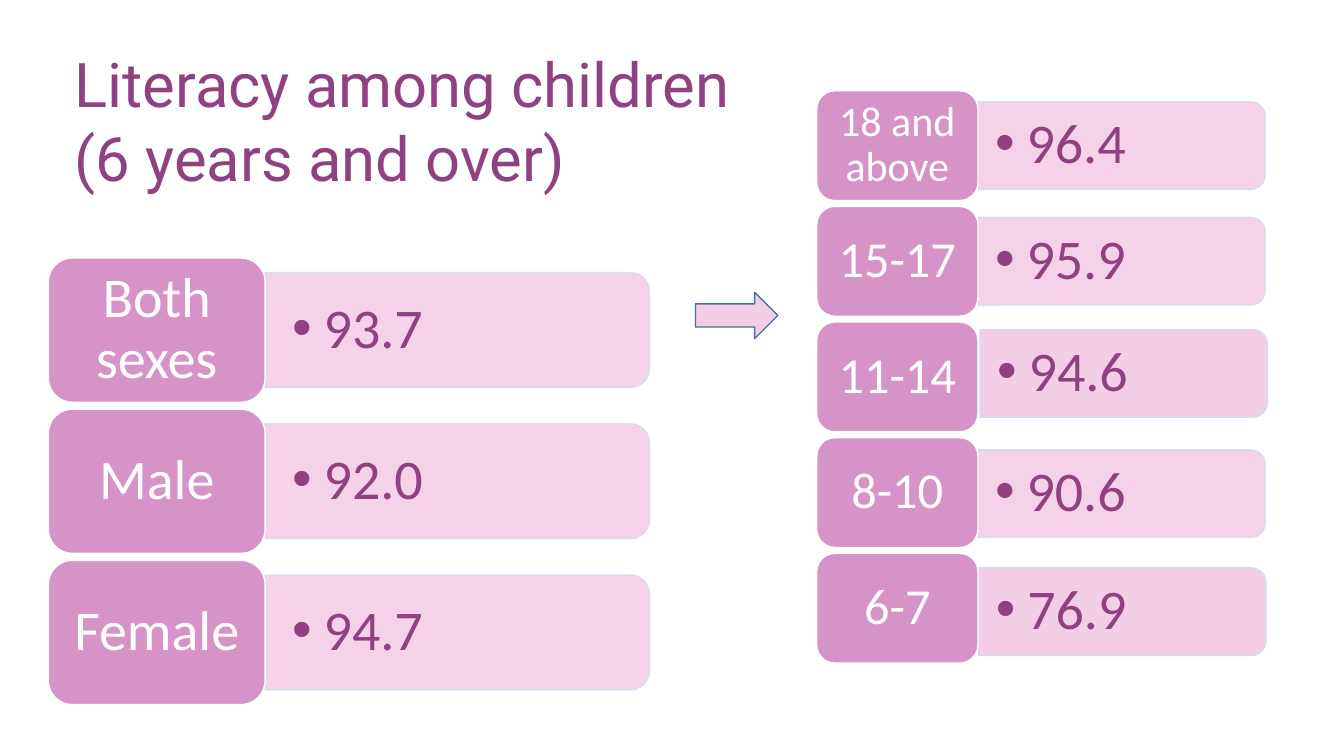
from dataclasses import dataclass

from lxml.etree import SubElement
from pptx import Presentation
from pptx.dml.color import RGBColor
from pptx.enum.shapes import MSO_SHAPE
from pptx.enum.text import MSO_ANCHOR, PP_ALIGN
from pptx.oxml.ns import qn
from pptx.util import Pt

PLUM = RGBColor(0x8F, 0x41, 0x80)
PINK = RGBColor(0xF4, 0xCE, 0xE5)
MAUVE = RGBColor(0xD5, 0x93, 0xC7)
WHITE = RGBColor(0xFF, 0xFF, 0xFF)
PALE = RGBColor(0xD2, 0xDE, 0xEF)
BLUE = RGBColor(0x43, 0x73, 0x9E)


@dataclass
class Row:
    label: str
    value: str
    size: float = 36
    dx: float = 0
    dy: float = 0
    solid: bool = False


@dataclass
class Panel:
    left: float
    top: float
    step: float
    wide: float
    high: float
    bar_wide: float
    bar_high: float
    pad: float
    inset: float
    rows: list[Row]


SEXES = Panel(34.56, 184.3, 108, 154.8, 103, 274.6, 82.1, 9, 19.4, [
    Row("Both sexes", "93.7", 40),
    Row("Male", "92.0", 40),
    Row("Female", "94.7", 40),
])
AGES = Panel(583.4, 64.8, 82.6, 115.2, 78.5, 205.2, 62.6, 6, 12.2, [
    Row("18 and above", "96.4", 30),
    Row("15-17", "95.9"),
    Row("11-14", "94.6", dx=1.5, dy=-2.5, solid=True),
    Row("8-10", "90.6", dy=0.8),
    Row("6-7", "76.9", dx=0.5, dy=2.5, solid=True),
])


def add_form(slide, kind, left, top, wide, high, fill, line):
    """Add a preset shape with a flat fill and a thin outline."""
    form = slide.shapes.add_shape(kind, Pt(left), Pt(top), Pt(wide), Pt(high))
    form.shadow.inherit = False
    form.fill.solid()
    form.fill.fore_color.rgb = fill
    form.line.color.rgb = line
    form.line.width = Pt(1)
    return form


def set_alpha(form) -> None:
    """Make the fill and the outline 90 percent opaque."""
    for tone in form._element.spPr.iter(qn("a:srgbClr")):
        SubElement(tone, qn("a:alpha"), val="90000")


def write(form, text: str, size: float, color: RGBColor,
          side: float, edge: float, face: str = "Calibri"):
    """Put one paragraph in the middle of a shape's height."""
    frame = form.text_frame
    frame.word_wrap = True
    frame.vertical_anchor = MSO_ANCHOR.MIDDLE
    frame.margin_left = frame.margin_right = Pt(side)
    frame.margin_top = frame.margin_bottom = Pt(edge)
    frame.text = text
    para = frame.paragraphs[0]
    font = para.runs[0].font
    font.name, font.size, font.color.rgb = face, Pt(size), color
    return para


def add_dot(para) -> None:
    """Give the paragraph a bullet with a hanging indent."""
    props = para._p.get_or_add_pPr()
    props.set("marL", str(Pt(22.5)))
    props.set("indent", str(-Pt(22.5)))
    SubElement(props, qn("a:buFont"), typeface="Arial")
    SubElement(props, qn("a:buChar"), char="•")


def draw_row(slide, panel: Panel, row: Row, top: float) -> None:
    # Value bar: an upright shape turned a quarter to the right
    edge = panel.left + panel.wide + row.dx
    mid = top + panel.high / 2 + row.dy
    bar = add_form(slide, MSO_SHAPE.ROUND_2_SAME_RECTANGLE,
                   edge + (panel.bar_wide - panel.bar_high) / 2,
                   mid - panel.bar_wide / 2,
                   panel.bar_high, panel.bar_wide, PINK, PALE)
    bar.rotation = 90
    if not row.solid:
        set_alpha(bar)

    # Value text, level with the bar
    high = panel.bar_high - 6
    box = slide.shapes.add_textbox(Pt(edge), Pt(mid - high / 2),
                                   Pt(panel.bar_wide - 4), Pt(high))
    para = write(box, row.value, 40, PLUM, panel.inset, 6)
    add_dot(para)
    para.level = 1
    para.line_spacing = 0.9

    # Label
    tile = add_form(slide, MSO_SHAPE.ROUNDED_RECTANGLE, panel.left, top,
                    panel.wide, panel.high, MAUVE, WHITE)
    para = write(tile, row.label, row.size, WHITE, panel.pad, 4)
    para.alignment = PP_ALIGN.CENTER
    para.line_spacing = 0.9


def main() -> None:
    deck = Presentation()
    deck.slide_width, deck.slide_height = Pt(960), Pt(540)
    slide = deck.slides.add_slide(deck.slide_layouts[5])

    # Title
    title = slide.shapes.title
    title.left, title.top = Pt(46), Pt(29)
    title.width, title.height = Pt(489), Pt(113.8)
    para = write(title, "Literacy among children (6 years and over)",
                 44, PLUM, 7.2, 3.6, "Roboto")
    para.alignment = PP_ALIGN.LEFT

    # Panels by sex and by age
    for panel in (SEXES, AGES):
        for i, row in enumerate(panel.rows):
            draw_row(slide, panel, row, panel.top + i * panel.step)

    # Arrow between the panels
    add_form(slide, MSO_SHAPE.RIGHT_ARROW, 496.8, 208.8, 58.8, 33.1,
             PINK, BLUE)

    deck.save("out.pptx")


if __name__ == "__main__":
    main()
